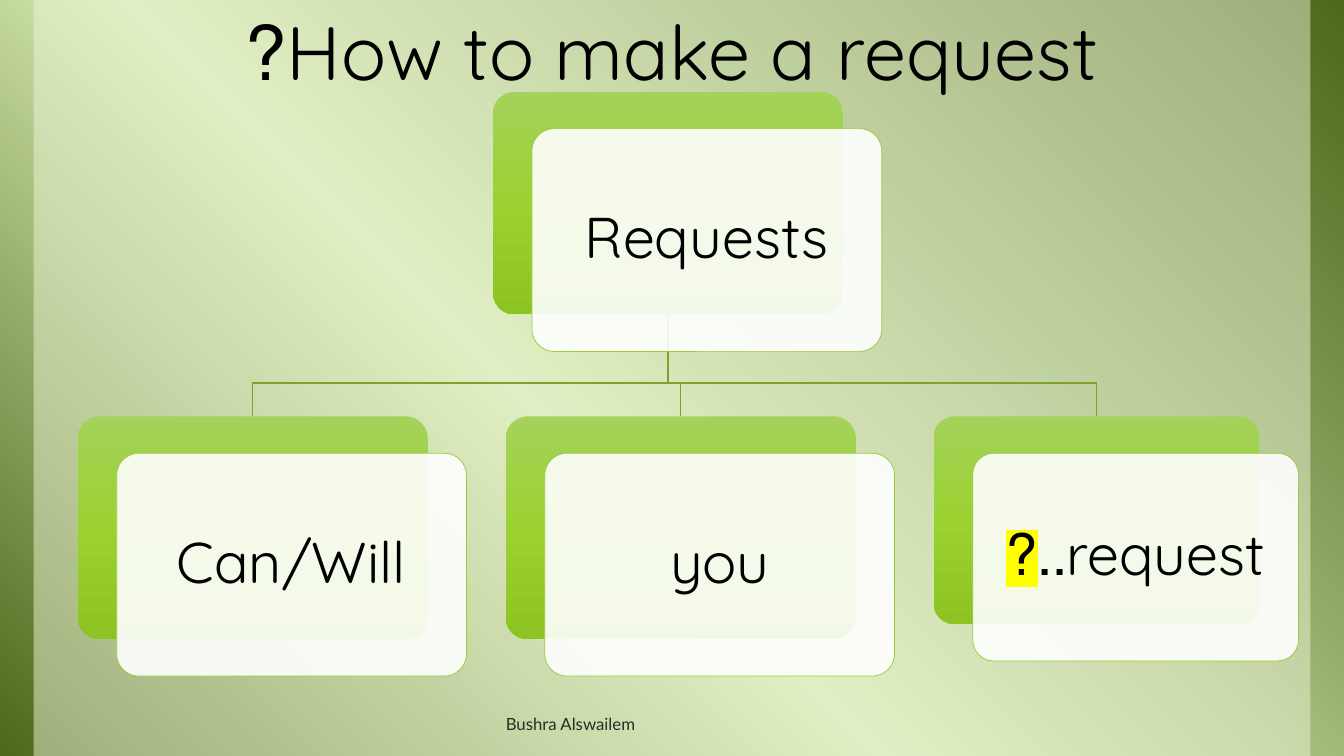
from dataclasses import dataclass

import lxml.etree
import pptx
import pptx.dml.color
import pptx.enum.shapes
import pptx.enum.text
import pptx.oxml
import pptx.oxml.ns
import pptx.util

SHAPE = pptx.enum.shapes.MSO_SHAPE
ANCHOR = pptx.enum.text.MSO_ANCHOR
CENTER = pptx.enum.text.PP_ALIGN.CENTER
qn = pptx.oxml.ns.qn

SLIDE_WIDTH = pptx.util.Inches(13.33)
SLIDE_HEIGHT = pptx.util.Inches(7.5)

BACKDROP_STOPS = ((0, "4D671B"), (58, "D6EAAF"), (100, "4D671B"))
PANEL_STOPS = ((0, "A4D25A"), (50, "9BD231"), (100, "8DC323"))
CARD_FRAME = dict.fromkeys(
    ("margin_left", "margin_top", "margin_right", "margin_bottom"),
    pptx.util.Inches(0.17),
) | {"word_wrap": True, "vertical_anchor": ANCHOR.MIDDLE}
FOOTER_FRAME = {
    "margin_left": pptx.util.Inches(0.13),
    "margin_right": pptx.util.Inches(0.13),
    "margin_top": pptx.util.Inches(0.07),
    "margin_bottom": pptx.util.Inches(0.07),
    "word_wrap": True,
    "vertical_anchor": ANCHOR.BOTTOM,
}
TITLE_FRAME = {
    "word_wrap": False,
    "auto_size": pptx.enum.text.MSO_AUTO_SIZE.SHAPE_TO_FIT_TEXT,
    "vertical_anchor": ANCHOR.TOP,
}


@dataclass(frozen=True)
class Area:
    """A rectangle in percent of the slide's width and height."""
    left: float
    top: float
    width: float
    height: float

    def shifted(self, across: float, down: float) -> "Area":
        return Area(self.left + across, self.top + down, self.width, self.height)

    @property
    def middle(self) -> float:
        return self.left + self.width / 2

    @property
    def bottom(self) -> float:
        return self.top + self.height


@dataclass(frozen=True)
class Span:
    text: str
    highlight: str = ""


@dataclass(frozen=True)
class Node:
    area: Area
    spans: tuple[Span, ...]


CHILD_LEFT, CHILD_PITCH, CHILD_TOP = 5.78, 31.85, 55.07
NODE_SIZE, LAST_SIZE = (26.03, 29.47), (24.23, 27.47)
CARD_SHIFT = (2.9, 4.89)
BRANCH_ROW = 50.67

ROOT = Node(Area(36.68, 12.13, *NODE_SIZE), (Span("Requests"),))
CHILDREN = [
    Node(Area(CHILD_LEFT + column * CHILD_PITCH, CHILD_TOP, *size), spans)
    for column, (size, spans) in enumerate((
        (NODE_SIZE, (Span("Can/Will"),)),
        (NODE_SIZE, (Span("you"),)),
        (LAST_SIZE, (Span("request.."), Span("?", "FFFF00"))),
    ))
]


def across(share: float) -> int:
    return round(SLIDE_WIDTH * share / 100)


def down(share: float) -> int:
    return round(SLIDE_HEIGHT * share / 100)


def bounds(area: Area) -> tuple[int, int, int, int]:
    return across(area.left), down(area.top), across(area.width), down(area.height)


def color(value: str) -> pptx.dml.color.RGBColor:
    return pptx.dml.color.RGBColor.from_string(value)


def apply(target, values: dict) -> None:
    for name, value in values.items():
        setattr(target, name, value)


def add_box(slide, kind, area: Area):
    box = slide.shapes.add_shape(kind, *bounds(area))
    box.shadow.inherit = False
    box.line.fill.background()
    return box


def fill_gradient(box, stops, degrees: int) -> None:
    box.fill.gradient()
    gradient = box.element.spPr.find(qn("a:gradFill"))
    stop_list = gradient.find(qn("a:gsLst"))
    for stop in list(stop_list):
        stop_list.remove(stop)
    for percent, value in stops:
        stop = lxml.etree.SubElement(stop_list, qn("a:gs"), pos=str(percent * 1000))
        lxml.etree.SubElement(stop, qn("a:srgbClr"), val=value)
    gradient.find(qn("a:lin")).set("ang", str(degrees * 60000))


def fill_veil(box, value: str, opacity: int) -> None:
    """Fill with a colour of the given opacity in percent."""
    box.fill.solid()
    box.fill.fore_color.rgb = color(value)
    tone = box.element.spPr.find(qn("a:solidFill"))[0]
    lxml.etree.SubElement(tone, qn("a:alpha"), val=str(opacity * 1000))


def flip(box) -> None:
    box.element.spPr.find(qn("a:xfrm")).set("flipH", "1")


def write(frame, frame_format: dict, spans: tuple[Span, ...], font: str,
          size: float, ink: str, line_spacing: float = 1.0) -> None:
    """Write one centred right-to-left paragraph."""
    apply(frame, frame_format)
    para = frame.paragraphs[0]
    apply(para, {"alignment": CENTER, "line_spacing": line_spacing})
    para._p.get_or_add_pPr().set("rtl", "1")
    for span in spans:
        run = para.add_run()
        run.text = span.text
        apply(run.font, {"name": font, "size": pptx.util.Pt(size)})
        run.font.color.rgb = color(ink)
        if span.highlight:
            mark = lxml.etree.Element(qn("a:highlight"))
            lxml.etree.SubElement(mark, qn("a:srgbClr"), val=span.highlight)
            run.font._element.find(qn("a:solidFill")).addnext(mark)


def add_backdrop(slide) -> None:
    backdrop = add_box(slide, SHAPE.RECTANGLE, Area(0, 0, 100, 100))
    fill_gradient(backdrop, BACKDROP_STOPS, 45)
    flip(backdrop)
    veil = add_box(slide, SHAPE.RECTANGLE, Area(2.5, 0, 95, 100))
    fill_veil(veil, "EBF5D7", 50)
    flip(veil)


def add_branch(slide, parent: Area, child: Area) -> None:
    start = across(parent.middle), down(parent.bottom)
    end = across(child.middle)
    builder = slide.shapes.build_freeform(*start)
    builder.add_line_segments(
        [(start[0], down(BRANCH_ROW)), (end, down(BRANCH_ROW)), (end, down(child.top))],
        close=False,
    )
    branch = builder.convert_to_shape()
    branch.shadow.inherit = False
    branch.fill.background()
    branch.line.color.rgb = color("7BA32D")
    branch.line.width = pptx.util.Pt(1)


def add_node(slide, node: Node) -> None:
    panel = add_box(slide, SHAPE.ROUNDED_RECTANGLE, node.area)
    fill_gradient(panel, PANEL_STOPS, 90)
    card = add_box(slide, SHAPE.ROUNDED_RECTANGLE, node.area.shifted(*CARD_SHIFT))
    fill_veil(card, "FFFFFF", 90)
    card.line.color.rgb = color("99CB38")
    card.line.width = pptx.util.Pt(0.5)
    for box in (panel, card):
        box.adjustments[0] = 0.1
    write(card.text_frame, CARD_FRAME, node.spans, "Quicksand", 41, "000000", 0.9)


def main() -> None:
    deck = pptx.Presentation()
    apply(deck, {"slide_width": SLIDE_WIDTH, "slide_height": SLIDE_HEIGHT})
    page = deck.slides.add_slide(deck.slide_layouts[5])

    add_backdrop(page)
    footer = page.shapes.add_textbox(*bounds(Area(16.95, 93.33, 51, 4.67)))
    write(footer.text_frame, FOOTER_FRAME, (Span("Bushra Alswailem"),),
          "Lato", 12, "223028")

    for child in reversed(CHILDREN):
        add_branch(page, ROOT.area, child.area)
    for node in (ROOT, *CHILDREN):
        add_node(page, node)

    title = page.shapes.title
    apply(title, dict(zip(("left", "top", "width", "height"),
                          bounds(Area(15.3, 0, 69.32, 13.47)))))
    write(title.text_frame, TITLE_FRAME, (Span("How to make a request?"),),
          "Quicksand", 54, "000000")
    title.element.getparent().append(title.element)  # bring in front of the backdrop

    deck.save("out.pptx")


if __name__ == "__main__":
    main()
